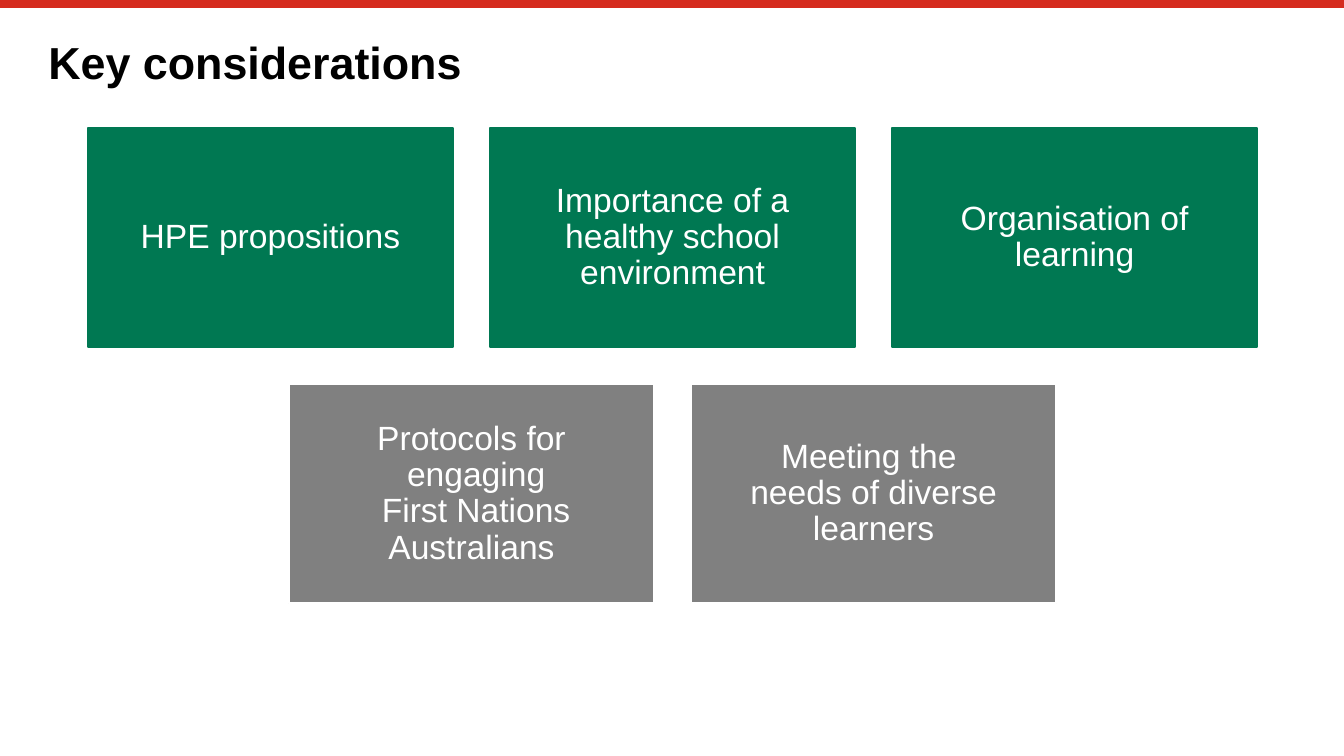
import pptx
import pptx.util
import pptx.dml.color
import pptx.enum.shapes
import pptx.enum.text
import lxml.etree

Pt = pptx.util.Pt
Color = pptx.dml.color.RGBColor
Align = pptx.enum.text.PP_ALIGN
Anchor = pptx.enum.text.MSO_ANCHOR

RED = Color(0xD5, 0x2B, 0x1E)
GREEN = Color(0x00, 0x78, 0x52)
GREY = Color(0x80, 0x80, 0x80)
WHITE = Color(0xFF, 0xFF, 0xFF)
BLACK = Color(0x00, 0x00, 0x00)

WIDE, HIGH = 720, 405
CARD_W, CARD_H = 195.8, 117.4
GAP = 19.6

# Each row: top, fill, outline, labels
ROWS = [
    (68.5, GREEN, GREEN, ["HPE propositions",
                          "Importance of a healthy school environment",
                          "Organisation of learning"]),
    (205.8, GREY, WHITE, ["Protocols for\n engaging\n First Nations Australians",
                          "Meeting the \nneeds of diverse learners"]),
]


def write(shape, text, size=18, color=WHITE, bold=False,
          align=Align.CENTER, anchor=Anchor.MIDDLE, inset=5.4):
    frame = shape.text_frame
    frame.word_wrap = True
    frame.auto_size = pptx.enum.text.MSO_AUTO_SIZE.NONE
    frame.vertical_anchor = anchor
    frame.margin_left = frame.margin_right = Pt(inset)
    frame.margin_top = frame.margin_bottom = Pt(inset)
    para = frame.paragraphs[0]
    para.text = text
    para.alignment = align
    para.line_spacing = 0.9
    para.space_before = Pt(0)
    for run in para.runs:
        font = run.font
        font.name, font.size, font.bold = "Arial", Pt(size), bold
        font.color.rgb = color


def add_header(slide, left, top, width, height):
    # Red rule along the top edge
    rule = slide.shapes.add_connector(
        pptx.enum.shapes.MSO_CONNECTOR.STRAIGHT, 0, Pt(2.1), Pt(WIDE), Pt(2.1))
    rule.line.color.rgb = RED
    rule.line.width = Pt(4.2)
    lxml.etree.SubElement(rule._element.spPr, pptx.oxml.ns.qn("a:effectLst"))

    # Title
    title = slide.shapes.title
    title.left, title.top = Pt(left), Pt(top)
    title.width, title.height = Pt(width), Pt(height)
    write(title, "Key considerations", size=24, color=BLACK, bold=True,
          align=Align.LEFT, anchor=Anchor.TOP, inset=0)


def add_row(slide, left, top, width, fill, edge, labels):
    # Cards are centred as a group within the given width
    span = len(labels) * (CARD_W + GAP) - GAP
    start = left + (width - span) / 2
    for i, label in enumerate(labels):
        card = slide.shapes.add_shape(
            pptx.enum.shapes.MSO_SHAPE.RECTANGLE,
            Pt(start + i * (CARD_W + GAP)), Pt(top), Pt(CARD_W), Pt(CARD_H))
        card.shadow.inherit = False
        card.fill.solid()
        card.fill.fore_color.rgb = fill
        card.line.color.rgb = edge
        card.line.width = Pt(1)
        write(card, label)


def main():
    deck = pptx.Presentation()
    deck.slide_width, deck.slide_height = Pt(WIDE), Pt(HIGH)
    slide = deck.slides.add_slide(deck.slide_layouts[5])
    add_header(slide, 25.9, 21.6, 669, 28)
    for top, fill, edge, labels in ROWS:
        add_row(slide, 0.3, top, WIDE, fill, edge, labels)
    deck.save("out.pptx")


if __name__ == "__main__":
    main()
